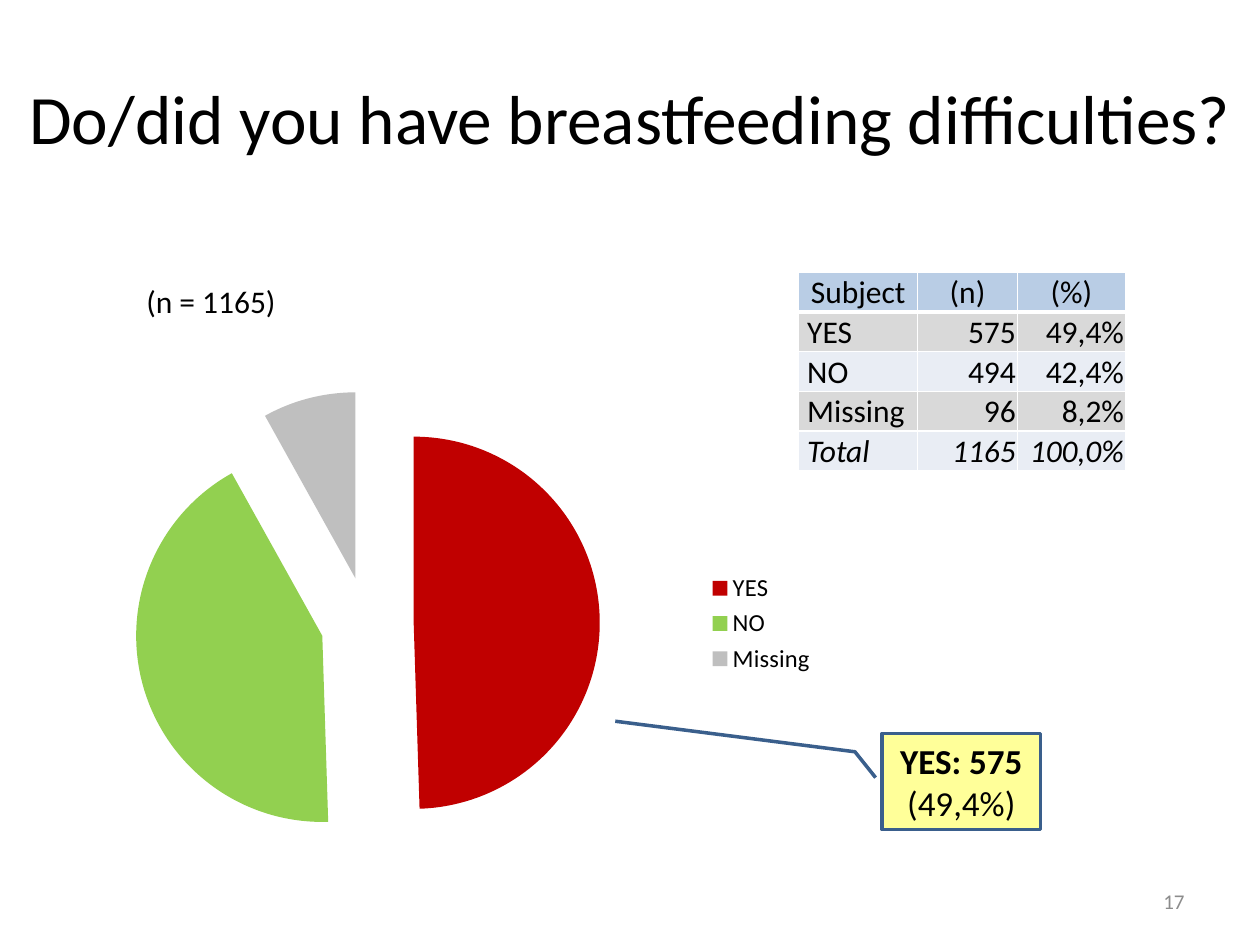
from dataclasses import dataclass

from lxml.etree import SubElement
from pptx import Presentation
from pptx.chart.data import CategoryChartData
from pptx.dml.color import RGBColor
from pptx.enum.chart import XL_CHART_TYPE, XL_LEGEND_POSITION
from pptx.enum.shapes import MSO_SHAPE
from pptx.enum.text import MSO_ANCHOR, PP_ALIGN
from pptx.oxml import parse_xml
from pptx.oxml.ns import nsdecls, qn
from pptx.util import Cm, Pt


@dataclass(frozen=True)
class Theme:
    font: str = "Calibri"
    text: str = "000000"
    muted: str = "8C8C8C"
    border: str = "FFFFFF"
    header: str = "B9CDE5"
    bands: tuple = ("D9D9D9", "E9EDF4")
    answers: tuple = ("C00000", "92D050", "BFBFBF")
    callout_fill: str = "FFFF99"
    callout_line: str = "3A5F8C"
    title_size: float = 39.6
    callout_size: float = 20
    body_size: float = 18
    legend_size: float = 14
    number_size: float = 12


THEME = Theme()

ANSWERS = {"YES": 49, "NO": 42, "Missing": 8}
RESULTS = [
    ("Subject", "(n)", "(%)"),
    (" YES", "575", "49,4%"),
    (" NO", "494", "42,4%"),
    (" Missing", "96", "8,2%"),
    (" Total", "1165", "100,0%"),
]


def rgb(value):
    return RGBColor.from_string(value)


def style_font(font, size, color=THEME.text, bold=False, italic=False):
    font.name = THEME.font
    font.size = Pt(size)
    font.bold = bold
    font.italic = italic
    font.color.rgb = rgb(color)


def add_label(slide, box, text, size, color=THEME.text, align=PP_ALIGN.LEFT,
              anchor=MSO_ANCHOR.TOP, wrap=True):
    frame = slide.shapes.add_textbox(*map(Cm, box)).text_frame
    frame.word_wrap = wrap
    frame.vertical_anchor = anchor
    frame.text = text
    paragraph = frame.paragraphs[0]
    paragraph.alignment = align
    style_font(paragraph.runs[0].font, size, color)


def set_borders(cell, **widths):
    """Draw cell borders; widths are points keyed by side (L, R, T, B)."""
    properties = cell._tc.get_or_add_tcPr()
    for position, (side, width) in enumerate(widths.items()):
        border = parse_xml(
            f'<a:ln{side} {nsdecls("a")} w="{Pt(width)}"><a:solidFill>'
            f'<a:srgbClr val="{THEME.border}"/></a:solidFill></a:ln{side}>')
        properties.insert(position, border)


def add_results_table(slide):
    widths = (2.4, 2.01, 2.18)
    row_height = 0.8
    table = slide.shapes.add_table(
        len(RESULTS), len(widths), Cm(16.1), Cm(5.49),
        Cm(sum(widths)), Cm(row_height * len(RESULTS))).table
    for column, width in zip(table.columns, widths):
        column.width = Cm(width)
    for row_index, values in enumerate(RESULTS):
        table.rows[row_index].height = Cm(row_height)
        is_header = row_index == 0
        is_total = row_index == len(RESULTS) - 1
        fill = THEME.header if is_header else THEME.bands[(row_index - 1) % 2]
        for column_index, value in enumerate(values):
            cell = table.cell(row_index, column_index)
            cell.margin_left = cell.margin_right = cell.margin_top = Cm(0.03)
            cell.margin_bottom = 0
            cell.vertical_anchor = MSO_ANCHOR.BOTTOM
            cell.fill.solid()
            cell.fill.fore_color.rgb = rgb(fill)
            set_borders(cell, L=1, R=1, T=3 if row_index == 1 else 1,
                        B=3 if is_header else 1)
            cell.text = value
            paragraph = cell.text_frame.paragraphs[0]
            if is_header:
                paragraph.alignment = PP_ALIGN.CENTER
            elif column_index > 0:
                paragraph.alignment = PP_ALIGN.RIGHT
            style_font(paragraph.runs[0].font, THEME.body_size, italic=is_total)


def add_callout(slide):
    callout = slide.shapes.add_shape(
        MSO_SHAPE.LINE_CALLOUT_2, Cm(17.78), Cm(14.79), Cm(3.2), Cm(1.93))
    for index, ratio in enumerate((0.46, -0.04, 0.19, -0.17, -0.13, -1.68)):
        callout.adjustments[index] = ratio
    callout.shadow.inherit = False
    callout.fill.solid()
    callout.fill.fore_color.rgb = rgb(THEME.callout_fill)
    callout.line.color.rgb = rgb(THEME.callout_line)
    callout.line.width = Pt(2)
    frame = callout.text_frame
    frame.word_wrap = True
    frame.vertical_anchor = MSO_ANCHOR.MIDDLE
    paragraph = frame.paragraphs[0]
    paragraph.alignment = PP_ALIGN.CENTER
    for text, bold in (("YES: 575", True), (" (49,4%)", False)):
        run = paragraph.add_run()
        run.text = text
        style_font(run.font, THEME.callout_size, bold=bold)


def explode(series, percent):
    """Pull all slices of a pie series away from its centre."""
    element = series._element
    explosion = SubElement(element, qn("c:explosion"), val=str(percent))
    element.find(qn("c:dPt")).addprevious(explosion)


def add_answers_pie(slide):
    data = CategoryChartData()
    data.categories = list(ANSWERS)
    data.add_series("Series 1", list(ANSWERS.values()))
    chart = slide.shapes.add_chart(
        XL_CHART_TYPE.PIE, Cm(0.6), Cm(7.53), Cm(16.1), Cm(10.08), data).chart
    style_font(chart.font, THEME.legend_size)
    chart.has_title = False
    chart.has_legend = True
    chart.legend.position = XL_LEGEND_POSITION.RIGHT
    chart.legend.include_in_layout = False
    style_font(chart.legend.font, THEME.legend_size)
    pie = chart.plots[0]
    pie.vary_by_categories = True
    series = pie.series[0]
    for index, color in enumerate(THEME.answers):
        slice_fill = series.points[index].format.fill
        slice_fill.solid()
        slice_fill.fore_color.rgb = rgb(color)
    explode(series, 25)


def main():
    presentation = Presentation()
    presentation.slide_width = Cm(25.4)
    presentation.slide_height = Cm(19.05)
    slide = presentation.slides.add_slide(presentation.slide_layouts[6])

    add_label(slide, (0, 0.76, 25.4, 3.18),
              "Do/did you have breastfeeding difficulties?", THEME.title_size,
              align=PP_ALIGN.CENTER, anchor=MSO_ANCHOR.MIDDLE)
    add_results_table(slide)
    add_label(slide, (2.7, 5.56, 3.15, 1.02), "(n = 1165)",
              THEME.body_size, wrap=False)
    add_callout(slide)
    add_answers_pie(slide)
    add_label(slide, (18.21, 17.65, 5.92, 1.02), "17", THEME.number_size,
              THEME.muted, PP_ALIGN.RIGHT, MSO_ANCHOR.MIDDLE)

    presentation.save("out.pptx")


if __name__ == "__main__":
    main()
